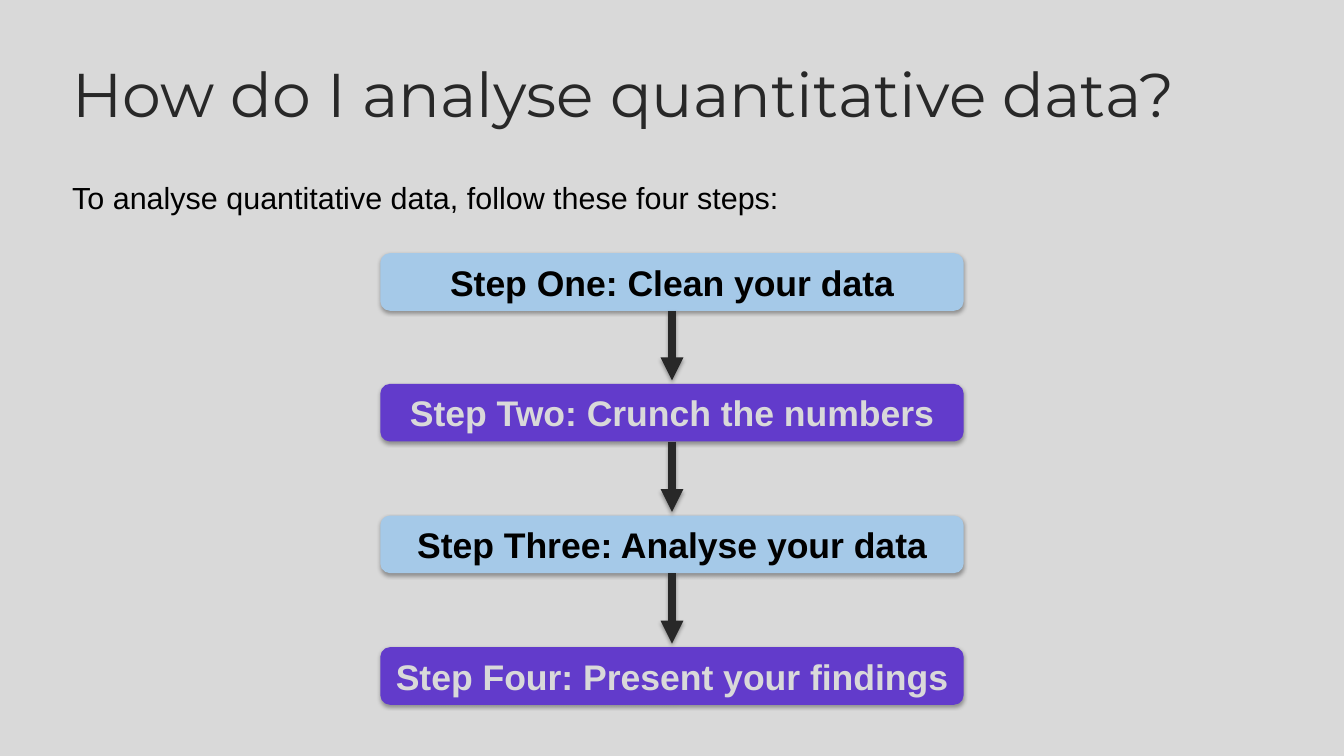
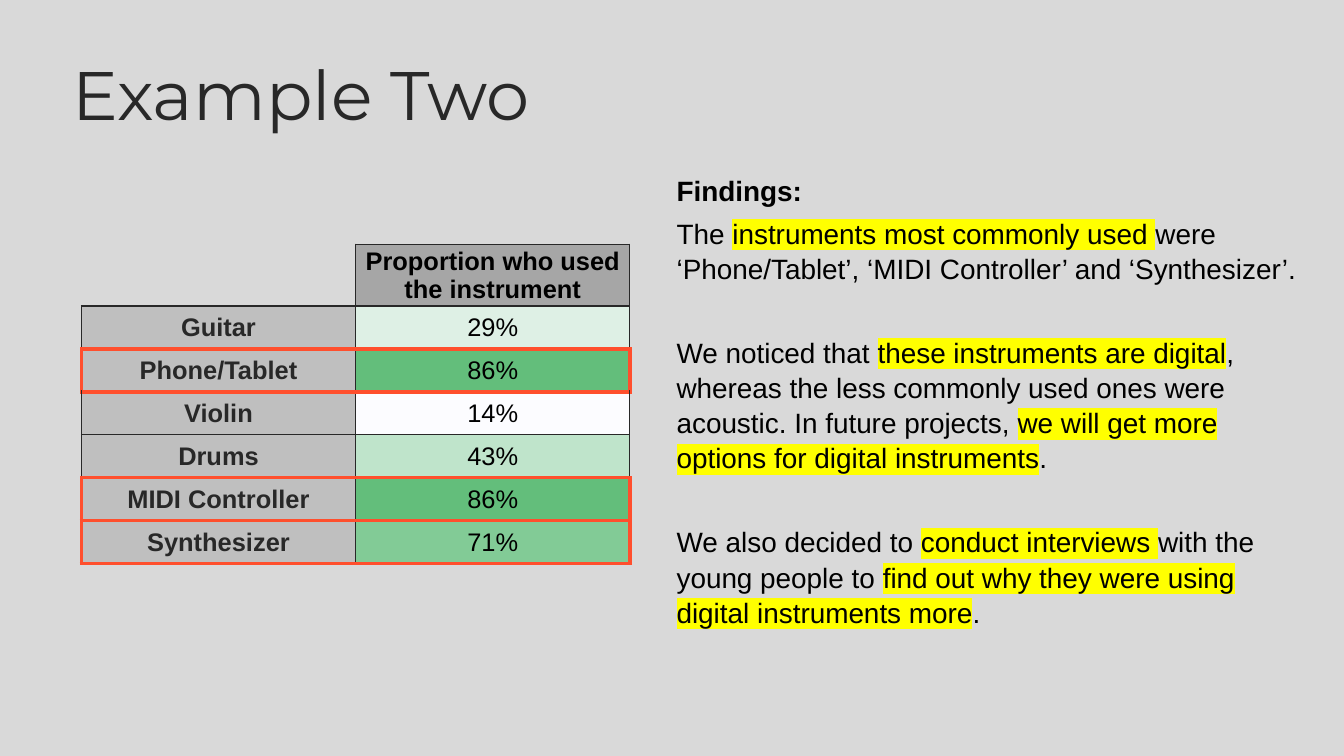
from dataclasses import dataclass
from typing import Any, Optional

from lxml import etree
from pptx import Presentation
from pptx.dml.color import RGBColor
from pptx.enum.shapes import MSO_CONNECTOR, MSO_SHAPE
from pptx.enum.text import MSO_ANCHOR, PP_ALIGN
from pptx.oxml.ns import qn
from pptx.util import Pt

ROUNDED = MSO_SHAPE.ROUNDED_RECTANGLE
STRAIGHT = MSO_CONNECTOR.STRAIGHT
LEFT, CENTER = PP_ALIGN.LEFT, PP_ALIGN.CENTER
TOP, MIDDLE = MSO_ANCHOR.TOP, MSO_ANCHOR.MIDDLE

# Shared look: 100 px to the inch
EMU_PER_PX = 9144
PAGE_W, PAGE_H = 1470, 827
BACKGROUND, DARK, BLACK = "D9D9D9", "282828", "000000"
BLUE, PURPLE, YELLOW, ORANGE = "A5C9E8", "623BCB", "FFFF00", "FF4F2D"
HEADER_GREY, LABEL_GREY = "A6A6A6", "BFBFBF"
TITLE_FONT, BODY_FONT = "Montserrat", "Arial"
INSET = 5


@dataclass(frozen=True)
class Area:
    left: int
    top: int
    width: int
    height: int

    def emu(self) -> list[int]:
        return [px(n) for n in (self.left, self.top, self.width, self.height)]


@dataclass(frozen=True)
class Style:
    size: float
    color: str = BLACK
    bold: bool = False
    font: str = BODY_FONT


@dataclass(frozen=True)
class Step:
    text: str
    fill: str
    color: str


@dataclass(frozen=True)
class Instrument:
    name: str
    share: str
    fill: str
    marked: bool = False


@dataclass(frozen=True)
class Span:
    text: str
    marked: bool = False
    bold: bool = False


@dataclass(frozen=True)
class Finding:
    spans: tuple[Span, ...]
    before: float = 3


TITLE_AREA = Area(74, 33, 1323, 138)

STEPS = (
    Step("Step One: Clean your data", BLUE, BLACK),
    Step("Step Two: Crunch the numbers", PURPLE, BACKGROUND),
    Step("Step Three: Analyse your data", BLUE, BLACK),
    Step("Step Four: Present your findings", PURPLE, BACKGROUND),
)
STEP_LEFT, STEP_W, STEP_H = 416, 638, 63
FIRST_TOP, LAST_TOP = 277, 708
ARROW_GAP = 4

INSTRUMENTS = (
    Instrument("Guitar", "29%", "DEF0E5"),
    Instrument("Phone/Tablet", "86%", "63BE7B", marked=True),
    Instrument("Violin", "14%", "FCFCFF"),
    Instrument("Drums", "43%", "BFE4CB"),
    Instrument("MIDI Controller", "86%", "63BE7B", marked=True),
    Instrument("Synthesizer", "71%", "82CB96", marked=True),
)
COLUMN_W, HEADER_H, ROW_H = 300, 64, 47

SECTION_GAP = 35.5
FINDINGS = (
    Finding((Span("Findings:", bold=True),), before=0),
    Finding((
        Span("The "),
        Span("instruments most commonly used ", marked=True),
        Span("were ‘Phone/Tablet’, ‘MIDI Controller’ and ‘Synthesizer’."),
    )),
    Finding((
        Span("We noticed that "),
        Span("these instruments are digital", marked=True),
        Span(", whereas the less commonly used ones were acoustic. In future projects, "),
        Span("we will get more options for digital instruments", marked=True),
        Span("."),
    ), SECTION_GAP),
    Finding((
        Span("We also decided to "),
        Span("conduct interviews ", marked=True),
        Span("with the young people to "),
        Span("find out why they were using digital instruments more", marked=True),
        Span("."),
    ), SECTION_GAP),
)


def px(length: int) -> int:
    return length * EMU_PER_PX


def rgb(color: str) -> RGBColor:
    return RGBColor.from_string(color)


def add_color(parent: Any, color: str) -> Any:
    return etree.SubElement(parent, qn("a:srgbClr"), val=color)


# Text
def add_span(para: Any, text: str, style: Style, highlight: Optional[str] = None) -> None:
    span = para.add_run()
    span.text = text
    font = span.font
    font.size, font.bold, font.name = Pt(style.size), style.bold, style.font
    font.color.rgb = rgb(style.color)
    if highlight:
        mark = etree.Element(qn("a:highlight"))
        add_color(mark, highlight)
        font._element.find(qn("a:solidFill")).addnext(mark)


def set_frame(box: Any, anchor: Any) -> Any:
    frame = box.text_frame
    frame.word_wrap = True
    frame.vertical_anchor = anchor
    frame.margin_left = frame.margin_right = px(INSET)
    frame.margin_top = frame.margin_bottom = px(INSET)
    return frame


def add_text(page: Any, area: Area, text: str, style: Style,
             anchor: Any = TOP, spacing: float = 1.0) -> None:
    frame = set_frame(page.shapes.add_textbox(*area.emu()), anchor)
    para = frame.paragraphs[0]
    para.alignment, para.line_spacing = LEFT, spacing
    add_span(para, text, style)


def add_page(deck: Any, title: str, title_size: float) -> Any:
    page = deck.slides.add_slide(deck.slide_layouts[6])
    page.background.fill.solid()
    page.background.fill.fore_color.rgb = rgb(BACKGROUND)
    add_text(page, TITLE_AREA, title, Style(title_size, DARK, font=TITLE_FONT), MIDDLE)
    return page


# Step boxes and arrows
def add_shadow(properties: Any) -> None:
    effects = properties.find(qn("a:effectLst"))
    if effects is None:
        effects = etree.SubElement(properties, qn("a:effectLst"))
    shadow = etree.SubElement(effects, qn("a:outerShdw"), blurRad=str(Pt(3)),
                              dist=str(Pt(1.8)), dir="5400000", rotWithShape="0")
    etree.SubElement(add_color(shadow, BLACK), qn("a:alpha"), val="35000")


def add_step(page: Any, step: Step, area: Area) -> Any:
    box = page.shapes.add_shape(ROUNDED, *area.emu())
    box.fill.solid()
    box.fill.fore_color.rgb = rgb(step.fill)
    box.line.fill.background()
    box.shadow.inherit = False
    add_shadow(box._element.spPr)
    para = set_frame(box, MIDDLE).paragraphs[0]
    para.alignment = CENTER
    add_span(para, step.text, Style(28, step.color, bold=True))
    return box


def add_arrow(page: Any, upper: Any, lower: Any) -> None:
    center = upper.left + upper.width // 2
    arrow = page.shapes.add_connector(STRAIGHT, center, upper.top + upper.height,
                                      center, lower.top - px(ARROW_GAP))
    arrow.begin_connect(upper, 2)
    arrow.line.width = Pt(6)
    arrow.line.color.rgb = rgb(DARK)
    properties = arrow._element.spPr
    etree.SubElement(properties.find(qn("a:ln")), qn("a:tailEnd"), type="triangle")
    add_shadow(properties)


# Table
def add_border(cell: Any, side: str, color: Optional[str]) -> None:
    width = Pt(3) if color == ORANGE else Pt(1)
    line = etree.SubElement(cell._tc.get_or_add_tcPr(), qn(f"a:ln{side}"), w=str(width))
    if color:
        add_color(etree.SubElement(line, qn("a:solidFill")), color)
    else:
        etree.SubElement(line, qn("a:noFill"))


def fill_cell(cell: Any, text: str, style: Style, fill: str) -> None:
    cell.fill.solid()
    cell.fill.fore_color.rgb = rgb(fill)
    cell.vertical_anchor = MIDDLE
    cell.margin_left = cell.margin_right = cell.margin_top = px(1)
    cell.margin_bottom = 0
    para = cell.text_frame.paragraphs[0]
    para.alignment = CENTER
    add_span(para, text, style)


def add_instrument_table(page: Any, left: int, top: int) -> None:
    count = len(INSTRUMENTS) + 1
    area = Area(left, top, 2 * COLUMN_W, HEADER_H + ROW_H * (count - 1))
    table = page.shapes.add_table(count, 2, *area.emu()).table
    table.first_row = table.horz_banding = False
    for column in table.columns:
        column.width = px(COLUMN_W)
    for index, row in enumerate(table.rows):
        row.height = px(ROW_H if index else HEADER_H)

    # An edge is orange when a row beside it is marked
    marked = [False, *(item.marked for item in INSTRUMENTS), False]
    for index in range(count):
        outer = ORANGE if marked[index] else DARK
        above = ORANGE if marked[index] or marked[index - 1] else DARK
        below = ORANGE if marked[index] or marked[index + 1] else DARK
        corner = index == 0
        label, value = table.cell(index, 0), table.cell(index, 1)
        label_edges = (None if corner else outer, DARK, None if corner else above, below)
        for cell, edges in ((label, label_edges), (value, (DARK, outer, above, below))):
            for side, color in zip("LRTB", edges):
                add_border(cell, side, color)

    table.cell(0, 0).fill.background()
    fill_cell(table.cell(0, 1), "Proportion who used the instrument",
              Style(20, bold=True), HEADER_GREY)
    for index, item in enumerate(INSTRUMENTS, start=1):
        fill_cell(table.cell(index, 0), item.name, Style(20, DARK, bold=True), LABEL_GREY)
        fill_cell(table.cell(index, 1), item.share, Style(20), item.fill)


def add_findings(page: Any, area: Area) -> None:
    frame = set_frame(page.shapes.add_textbox(*area.emu()), TOP)
    for index, finding in enumerate(FINDINGS):
        para = frame.add_paragraph() if index else frame.paragraphs[0]
        para.line_spacing = 1.05
        para.space_before, para.space_after = Pt(finding.before), Pt(3)
        for span in finding.spans:
            add_span(para, span.text, Style(22, bold=span.bold),
                     YELLOW if span.marked else None)


# Slides
def build_steps_page(deck: Any) -> None:
    page = add_page(deck, "How do I analyse quantitative data?", 48.6)
    add_text(page, Area(74, 171, 1233, 71),
             "To analyse quantitative data, follow these four steps:", Style(24), spacing=1.5)
    tops = [FIRST_TOP + (LAST_TOP - FIRST_TOP) * index // (len(STEPS) - 1)
            for index in range(len(STEPS))]
    boxes = [add_step(page, step, Area(STEP_LEFT, top, STEP_W, STEP_H))
             for step, top in zip(STEPS, tops)]
    for upper, lower in zip(boxes, boxes[1:]):
        add_arrow(page, upper, lower)


def build_example_page(deck: Any) -> None:
    page = add_page(deck, "Example Two", 54)
    add_instrument_table(page, 89, 267)
    add_findings(page, Area(735, 183, 698, 542))


def main() -> None:
    deck = Presentation()
    deck.slide_width, deck.slide_height = px(PAGE_W), px(PAGE_H)
    build_steps_page(deck)
    build_example_page(deck)
    deck.save("out.pptx")


if __name__ == "__main__":
    main()
